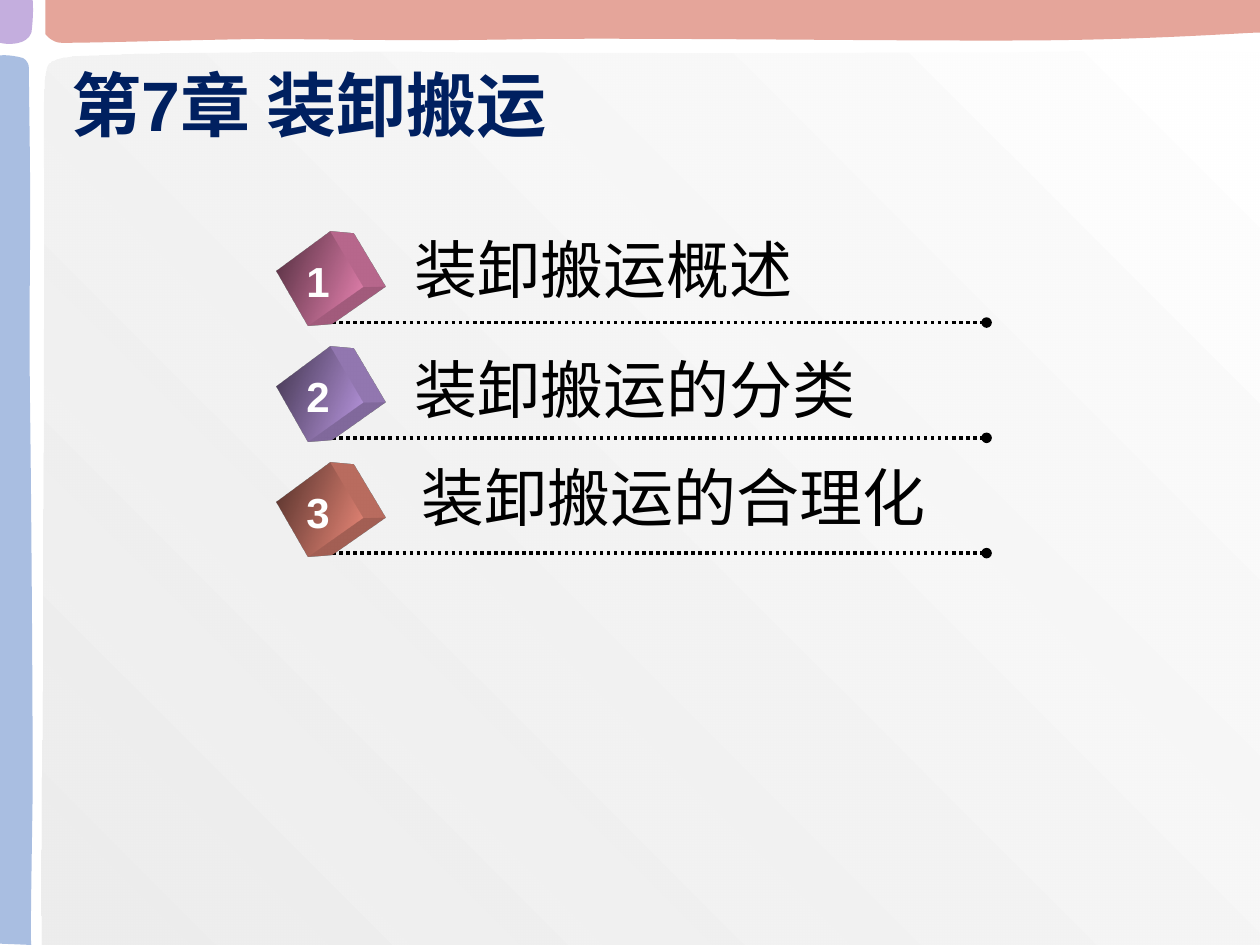
from lxml import etree
from pptx import Presentation
from pptx.dml.color import RGBColor
from pptx.enum.dml import MSO_LINE
from pptx.enum.shapes import MSO_CONNECTOR, MSO_SHAPE
from pptx.enum.text import MSO_ANCHOR, MSO_AUTO_SIZE, PP_ALIGN
from pptx.oxml import parse_xml
from pptx.oxml.ns import nsdecls, qn
from pptx.util import Inches, Pt

COLORS = {
    "navy": "002060", "black": "000000", "white": "FFFFFF", "panel": "E6E6E6",
    "coral": "DA7F70", "coral dark": "653B34",
    "violet": "AC8CD0", "violet dark": "504160",
    "pink": "D87AA5", "pink dark": "64384C",
    "blue": "85A3D5",
}
LATIN, TITLE_CJK, BODY_CJK = "Arial", "Noto Sans CJK JP", "Noto Sans CJK SC"

# Outlines: a start point, then line ends (2 numbers) or Bezier curves (6 numbers).
PANEL = [(10, 7.5), (10, 0.42), (8.86, 0.38, 8.55, 0.42, 7.6, 0.42),
         (6.66, 0.42, 5.5, 0.43, 4.33, 0.42), (3.16, 0.41, 1.23, 0.41, 0.57, 0.45),
         (0.36, 0.48, 0.36, 0.49, 0.35, 0.73), (0.34, 0.96, 0.35, 1.1, 0.35, 1.82),
         (0.35, 2.56, 0.34, 4.12, 0.34, 5.06), (0.34, 6.01, 0.32, 6.62, 0.33, 7.5),
         (5.17, 7.5, 10, 7.5, 10, 7.5)]
TOP_BAND = [(10, 0), (10, 0.26), (10.01, 0.25, 9.28, 0.31, 8.32, 0.32),
            (7.36, 0.33, 5.31, 0.3, 4.26, 0.31), (3.21, 0.33, 2.65, 0.31, 2.03, 0.31),
            (1.4, 0.32, 0.77, 0.34, 0.49, 0.34), (0.41, 0.34, 0.36, 0.27, 0.36, 0.27),
            (0.36, 0.27, 0.36, 0.14, 0.36, 0), (10, 0)]
SIDE_BAND = [(0, 7.49), (0.25, 7.5), (0.24, 7.51, 0.25, 6.98, 0.26, 6.28),
             (0.26, 5.58, 0.25, 4.07, 0.24, 3.3), (0.23, 2.54, 0.24, 2.12, 0.24, 1.67),
             (0.24, 1.21, 0.23, 0.75, 0.23, 0.54), (0.23, 0.48, 0.18, 0.46, 0.18, 0.46),
             (0.07, 0.43, 0, 0.44, 0, 0.44), (0, 7.49)]
CORNER = [(0, 0), (0.26, 0), (0.27, 0.12, 0.25, 0.26, 0.25, 0.26),
          (0.23, 0.31, 0.19, 0.33, 0.15, 0.34), (0.07, 0.36, 0, 0.34, 0, 0.34), (0, 0)]

# Colour, heading, then left, top and width of the heading
CHAPTERS = [("pink", "装卸搬运概述", 3.19, 1.78, 3.2),
            ("violet", "装卸搬运的分类", 3.19, 2.73, 3.7),
            ("coral", "装卸搬运的合理化", 3.25, 3.59, 4.2)]
FIRST_CUBE_TOP, ROW_PITCH = 1.93, 0.915


def rgb(name):
    return RGBColor.from_string(COLORS[name])


class ChapterSlide:
    """Holds the slide, its master and the style of its elements."""

    def __init__(self, slide):
        self.shapes = slide.shapes
        self.master_tree = slide.slide_layout.slide_master.shapes._spTree

    def set_opacity(self, shape, percent):
        color = next(shape._element.spPr.iter(qn("a:srgbClr")))
        etree.SubElement(color, qn("a:alpha")).set("val", str(percent * 1000))

    def fill_gradient(self, shape, first, last, angle):
        shape.fill.gradient()
        shape.fill.gradient_angle = angle
        for stop, name in zip(shape.fill.gradient_stops, (first, last)):
            stop.color.rgb = rgb(name)

    def outline(self, segments):
        """Draw a closed outline on the master, with true Bezier curves."""
        ends = [(Inches(segment[-2]), Inches(segment[-1])) for segment in segments]
        builder = self.shapes.build_freeform(*ends[0], scale=1.0)
        builder.add_line_segments(ends[1:], close=True)
        left, top = builder.shape_offset_x, builder.shape_offset_y
        shape = builder.convert_to_shape()
        lines = list(shape._element.iter(qn("a:lnTo")))
        for line, segment in zip(lines, segments[1:]):
            if len(segment) == 6:
                line.tag = qn("a:cubicBezTo")
                for x, y in (segment[2:4], segment[:2]):
                    control = etree.Element(qn("a:pt"))
                    control.set("x", str(Inches(x) - left))
                    control.set("y", str(Inches(y) - top))
                    line.insert(0, control)
        shape.shadow.inherit = False
        shape.line.fill.background()
        self.master_tree.append(shape._element)
        return shape

    def band(self, segments, color):
        shape = self.outline(segments)
        shape.fill.solid()
        shape.fill.fore_color.rgb = rgb(color)
        self.set_opacity(shape, 70)

    def panel(self, segments):
        shape = self.outline(segments)
        self.fill_gradient(shape, "panel", "white", 45)
        self.set_opacity(shape, 70)

    def style(self, paragraph, size, color, latin, cjk=None, bold=False):
        font = paragraph.font
        font.size, font.bold, font.name = Pt(size), bold, latin
        font.color.rgb = rgb(color)
        if cjk:
            latin_font = next(paragraph._p.iter(qn("a:latin")))
            east_asian = etree.Element(qn("a:ea"))
            east_asian.set("typeface", cjk)
            latin_font.addnext(east_asian)

    def title(self, text, left, top, width, height):
        title = self.shapes.title
        title.left, title.top = Inches(left), Inches(top)
        title.width, title.height = Inches(width), Inches(height)
        frame = title.text_frame
        frame.text = text
        frame.auto_size = MSO_AUTO_SIZE.NONE
        frame.vertical_anchor = MSO_ANCHOR.MIDDLE
        frame.paragraphs[0].alignment = PP_ALIGN.LEFT
        self.style(frame.paragraphs[0], 40, "navy", LATIN, TITLE_CJK, bold=True)

    def label(self, text, left, top, width, height, align, **font):
        box = self.shapes.add_textbox(Inches(left), Inches(top), Inches(width), Inches(height))
        frame = box.text_frame
        frame.word_wrap = False
        frame.auto_size = MSO_AUTO_SIZE.SHAPE_TO_FIT_TEXT
        frame.text = text
        frame.paragraphs[0].alignment = align
        self.style(frame.paragraphs[0], **font)

    def dotted_line(self, left, right, y):
        line = self.shapes.add_connector(MSO_CONNECTOR.STRAIGHT, Inches(left), Inches(y),
                                         Inches(right), Inches(y))
        line.line.width = Pt(2)
        line.line.color.rgb = rgb("black")
        line.line.dash_style = MSO_LINE.ROUND_DOT
        etree.SubElement(line.line._get_or_add_ln(), qn("a:tailEnd")).set("type", "oval")
        etree.SubElement(line._element.spPr, qn("a:effectLst"))

    def cube(self, left, top, color):
        """A rotated square, extruded to the back and turned to show its right side."""
        front = self.shapes.add_shape(MSO_SHAPE.RECTANGLE, Inches(left), Inches(top),
                                      Inches(0.52), Inches(0.57))
        front.rotation = 57
        front.shadow.inherit = False
        front.line.fill.background()
        self.fill_gradient(front, color, color + " dark", 270)
        properties = front._element.spPr
        properties.append(parse_xml(
            f'<a:scene3d {nsdecls("a")}><a:camera prst="legacyPerspectiveFront">'
            '<a:rot lat="0" lon="1500000" rev="0"/></a:camera>'
            '<a:lightRig rig="legacyFlat3" dir="b"/></a:scene3d>'))
        properties.append(parse_xml(
            f'<a:sp3d {nsdecls("a")} extrusionH="430200" prstMaterial="legacyMatte">'
            f'<a:extrusionClr><a:srgbClr val="{COLORS[color]}"/></a:extrusionClr></a:sp3d>'))


def main():
    presentation = Presentation()
    presentation.slide_width, presentation.slide_height = Inches(10), Inches(7.5)
    page = ChapterSlide(presentation.slides.add_slide(presentation.slide_layouts[5]))

    page.panel(PANEL)
    page.band(TOP_BAND, "coral")
    page.band(SIDE_BAND, "blue")
    page.band(CORNER, "violet")
    page.title("第7章 装卸搬运", 0.47, 0.31, 7.36, 1.03)

    for row, (color, heading, left, top, width) in enumerate(CHAPTERS):
        cube_top = FIRST_CUBE_TOP + row * ROW_PITCH
        page.dotted_line(2.58, 7.83, cube_top + 0.63)
        page.cube(2.27, cube_top, color)
        page.label(str(row + 1), 2.33, cube_top + 0.05, 0.39, 0.5, PP_ALIGN.CENTER,
                   size=24, color="white", latin=LATIN, bold=True)
        page.label(heading, left, top, width, 0.7, PP_ALIGN.LEFT,
                   size=36, color="black", latin=BODY_CJK, cjk=BODY_CJK)

    presentation.save("out.pptx")


if __name__ == "__main__":
    main()
